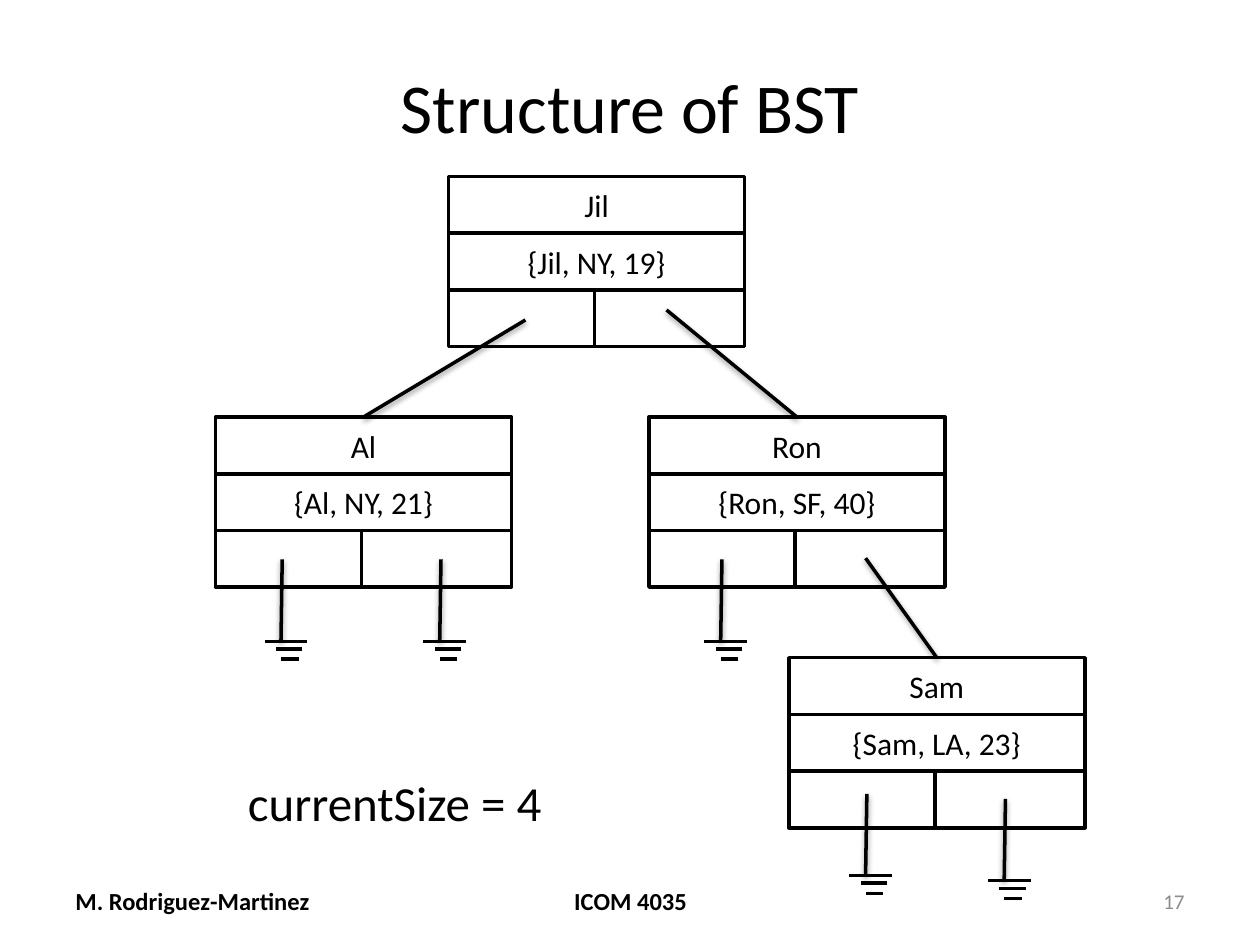
from lxml import etree
from pptx import Presentation
from pptx.dml.color import RGBColor
from pptx.enum.shapes import MSO_CONNECTOR, MSO_SHAPE
from pptx.enum.text import MSO_ANCHOR, MSO_AUTO_SIZE, PP_ALIGN
from pptx.oxml import parse_xml
from pptx.oxml.ns import nsdecls, qn
from pptx.util import Inches, Pt

RECT, STRAIGHT = MSO_SHAPE.RECTANGLE, MSO_CONNECTOR.STRAIGHT
LEFT, CENTER, RIGHT = PP_ALIGN.LEFT, PP_ALIGN.CENTER, PP_ALIGN.RIGHT
MIDDLE, TOP = MSO_ANCHOR.MIDDLE, MSO_ANCHOR.TOP
FONT, BLACK, WHITE, GRAY = "Calibri", "000000", "FFFFFF", "8C8C8C"

TITLE = "Structure of BST"
# key: (record, left, top)
NODES = {
    "Jil": ("{Jil, NY, 19}", 3.56, 1.4),
    "Al": ("{Al, NY, 21}", 1.71, 3.31),
    "Ron": ("{Ron, SF, 40}", 5.15, 3.31),
    "Sam": ("{Sam, LA, 23}", 6.26, 5.22),
}
# start of the link inside the parent, key of the child
LINKS = [((4.17, 2.54), "Al"), ((5.29, 2.46), "Ron"), ((6.87, 4.43), "Sam")]
# top of each null pointer's stem
NULLS = [(2.24, 4.44), (3.5, 4.44), (5.73, 4.44), (6.88, 6.3), (7.98, 6.34)]
# bars of the null symbol, relative to the stem's top: left, right, y
NULL_BARS = [(-0.14, 0.2, 0.65), (-0.05, 0.16, 0.71), (-0.01, 0.13, 0.79)]
# text, left, width, alignment, size, colour, bold
FOOTERS = [
    ("M. Rodriguez-Martinez", 0.5, 2.33, LEFT, 14, BLACK, True),
    ("ICOM 4035", 3.42, 3.17, CENTER, 14, BLACK, True),
    ("17", 7.17, 2.33, RIGHT, 12, GRAY, False),
]
NODE_W, ROW_H, ROW_STEP, POINTER_W = 2.35, 0.45, 0.45, 1.19

SHADOW = (
    f'<a:effectLst {nsdecls("a")}><a:outerShdw blurRad="40000" dist="20000" '
    'dir="5400000" rotWithShape="0"><a:srgbClr val="000000">'
    '<a:alpha val="38000"/></a:srgbClr></a:outerShdw></a:effectLst>'
)


def rgb(color):
    return RGBColor.from_string(color)


def write(frame, text, size, color=BLACK, bold=False, align=CENTER, anchor=MIDDLE):
    frame.vertical_anchor = anchor
    paragraph = frame.paragraphs[0]
    paragraph.alignment = align
    run = paragraph.add_run()
    run.text = text
    run.font.name, run.font.size, run.font.bold = FONT, Pt(size), bold
    run.font.color.rgb = rgb(color)


def add_text(shapes, box, wrap, *args, **style):
    frame = shapes.add_textbox(*map(Inches, box)).text_frame
    frame.word_wrap = wrap
    write(frame, *args, **style)
    return frame


def add_cell(shapes, left, top, width, text=None):
    cell = shapes.add_shape(RECT, *map(Inches, (left, top, width, ROW_H)))
    cell.shadow.inherit = False
    cell.fill.solid()
    cell.fill.fore_color.rgb = rgb(WHITE)
    cell.line.color.rgb = rgb(BLACK)
    cell.line.width = Pt(2)
    if text:
        write(cell.text_frame, text, 18)
    return cell


def add_node(shapes, key, record, left, top):
    """Draw key, record and two pointer cells; return the key cell."""
    key_cell = add_cell(shapes, left, top, NODE_W, key)
    add_cell(shapes, left, top + ROW_STEP, NODE_W, record)
    for x in (left, left + NODE_W - POINTER_W):
        add_cell(shapes, x, top + 2 * ROW_STEP, POINTER_W)
    return key_cell


def add_line(shapes, start, end, shadow=False):
    line = shapes.add_connector(STRAIGHT, *map(Inches, (*start, *end)))
    line.line.color.rgb = rgb(BLACK)
    line.line.width = Pt(2)
    properties = line._element.spPr
    if shadow:
        properties.append(parse_xml(SHADOW))
    else:
        etree.SubElement(properties, qn("a:effectLst"))
    return line


def add_null(shapes, x, y):
    """Draw a ground symbol hanging from a stem, as one group."""
    symbol = shapes.add_group_shape().shapes
    add_line(symbol, (x, y), (x - 0.01, y + NULL_BARS[0][2]), shadow=True)
    for left, right, drop in NULL_BARS:
        add_line(symbol, (x + right, y + drop), (x + left, y + drop))


def main():
    prs = Presentation()
    prs.slide_width, prs.slide_height = Inches(10), Inches(7.5)
    slide = prs.slides.add_slide(prs.slide_layouts[5])
    shapes = slide.shapes

    title = shapes.title
    title.left, title.top, title.width, title.height = map(Inches, (0.5, 0.3, 9, 1.07))
    write(title.text_frame, TITLE, 40)

    for text, left, width, align, size, color, bold in FOOTERS:
        add_text(shapes, (left, 6.95, width, 0.4), True, text, size, color, bold, align)

    key_cells = {
        key: add_node(shapes, key, *details) for key, details in NODES.items()
    }
    for start, child in LINKS:
        _, left, top = NODES[child]
        link = add_line(shapes, start, (left + NODE_W / 2, top), shadow=True)
        link.end_connect(key_cells[child], 0)
    for stem in NULLS:
        add_null(shapes, *stem)

    size_note = add_text(shapes, (1.87, 6.08, 2.57, 0.57), False,
                         "currentSize = 4", 28, align=LEFT, anchor=TOP)
    size_note.auto_size = MSO_AUTO_SIZE.SHAPE_TO_FIT_TEXT

    prs.save("out.pptx")


if __name__ == "__main__":
    main()
